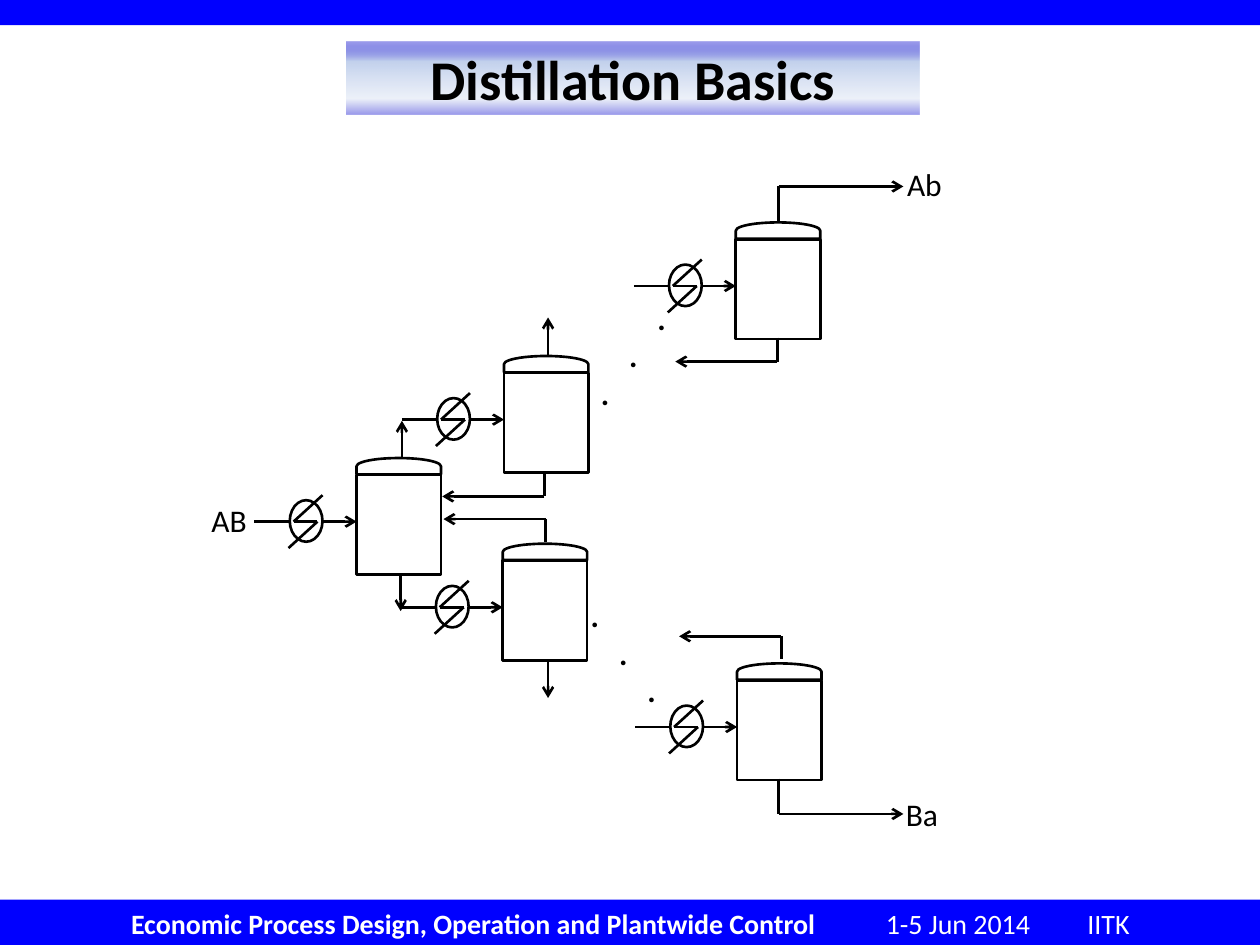
from lxml import etree
from pptx import Presentation, util as u
from pptx.dml.color import RGBColor
from pptx.enum import shapes, text
from pptx.oxml import parse_xml
from pptx.oxml.ns import nsdecls, qn

WIDTH, HEIGHT = 10, 7.5
INK, BLUE, WHITE = "000000", "0000FF", "FFFFFF"
TANK_W, TANK_H, CAP_H = 0.67, 0.79, 0.13
DOT_INDENT = 0.225
BOX = shapes.MSO_SHAPE.RECTANGLE


def rgb(value):
    return RGBColor.from_string(value)


def add_shape(slide, kind, left, top, width, height, fill=None, line=None):
    shape = slide.shapes.add_shape(kind, *map(u.Inches, (left, top, width, height)))
    shape.shadow.inherit = False
    if fill:
        shape.fill.solid()
        shape.fill.fore_color.rgb = rgb(fill)
    else:
        shape.fill.background()
    if line:
        shape.line.color.rgb = rgb(line)
        shape.line.width = u.Pt(1.5)
    else:
        shape.line.fill.background()
    return shape


def write(shape, paragraphs, size=18, color=INK, align=text.PP_ALIGN.LEFT,
          anchor=text.MSO_ANCHOR.TOP, wrap=False, indents=()):
    """Fill a shape with paragraphs, each a list of (words, bold) runs."""
    frame = shape.text_frame
    frame.word_wrap = wrap
    frame.vertical_anchor = anchor
    for i, runs in enumerate(paragraphs):
        paragraph = frame.add_paragraph() if i else frame.paragraphs[0]
        paragraph.alignment = align
        if indents:
            paragraph._p.get_or_add_pPr().set("marL", str(u.Inches(indents[i])))
        for words, bold in runs:
            run = paragraph.add_run()
            run.text = words
            run.font.name, run.font.size, run.font.bold = "Calibri", u.Pt(size), bold
            run.font.color.rgb = rgb(color)
    return frame


def pipe(slide, *points, arrow=True):
    """Join points with straight lines; the arrow sits at the last one."""
    for start, end in zip(points, points[1:]):
        line = slide.shapes.add_connector(
            shapes.MSO_CONNECTOR.STRAIGHT, *map(u.Inches, (*start, *end)))
        line.line.color.rgb = rgb(INK)
        line.line.width = u.Pt(1.5)
        if arrow and end == points[-1]:
            etree.SubElement(line.line._get_or_add_ln(), qn("a:tailEnd"), type="arrow")
        etree.SubElement(line._element.spPr, qn("a:effectLst"))


def bars(slide):
    add_shape(slide, BOX, 0, 0, WIDTH, 0.2, fill=BLUE)
    footer = add_shape(slide, BOX, 0, 7.14, WIDTH, 0.37, fill=BLUE)
    course = "Economic Process Design, Operation and Plantwide Control"
    frame = write(footer, [[(course, True), ("\t1-5 Jun 2014\tIITK", False)]], size=16,
                  color=WHITE, anchor=text.MSO_ANCHOR.MIDDLE, wrap=True)
    frame.margin_left, frame.margin_right = u.Inches(1.04), 0
    tabs = etree.SubElement(frame.paragraphs[0]._p.get_or_add_pPr(), qn("a:tabLst"))
    for stop in (5.99, 7.59):
        etree.SubElement(tabs, qn("a:tab"), pos=str(u.Inches(stop)), algn="l")


def title(slide, left, top, width, height):
    banner = add_shape(slide, BOX, left, top, width, height)
    stops = [(1, "0000CC", 39), (27, "C2D1ED", 100), (78, "D2DDF1", 40), (100, "0000CC", 40)]
    stop_xml = "".join(
        f'<a:gs pos="{pos * 1000}"><a:srgbClr val="{color}">'
        f'<a:alpha val="{alpha * 1000}"/></a:srgbClr></a:gs>' for pos, color, alpha in stops)
    gradient = parse_xml(f'<a:gradFill {nsdecls("a")} rotWithShape="1"><a:gsLst>{stop_xml}'
                         '</a:gsLst><a:lin ang="5400000" scaled="0"/></a:gradFill>')
    properties = banner._element.spPr
    properties.replace(properties.find(qn("a:noFill")), gradient)
    write(banner, [[("Distillation Basics", True)]], size=32, wrap=True,
          align=text.PP_ALIGN.CENTER, anchor=text.MSO_ANCHOR.MIDDLE)


def column(slide, left, feed):
    """Tank with its left edge at left, fed through a heater at height feed."""
    add_shape(slide, BOX, left, feed - 0.37, TANK_W, TANK_H, line=INK)
    cap = add_shape(slide, shapes.MSO_SHAPE.FLOWCHART_DELAY, left + (TANK_W - CAP_H) / 2,
                    feed - 0.44 - TANK_W / 2, CAP_H, TANK_W, line=INK)
    cap.rotation = 270
    add_shape(slide, shapes.MSO_SHAPE.OVAL, left - 0.53, feed - 0.17, 0.26, 0.33, line=INK)
    slash = [(-0.27, -0.21), (-0.5, 0), (-0.31, 0), (-0.54, 0.21)]
    pipe(slide, *((left + x, feed + y) for x, y in slash), arrow=False)
    pipe(slide, (left - 0.81, feed), (left - 0.54, feed), arrow=False)
    pipe(slide, (left - 0.27, feed), (left, feed))


def recycle(slide, x, tank_end, turn):
    """Stream that leaves a tank, turns and runs back to the left."""
    pipe(slide, (x, tank_end), (x, turn), (x - 0.81, turn))


def label(slide, words, left, top):
    box = slide.shapes.add_textbox(*map(u.Inches, (left, top, 0.48, 0.4)))
    write(box, [[(words, False)]])


def dots(slide, left, top, levels):
    box = slide.shapes.add_textbox(*map(u.Inches, (left, top, 0.8, 1.01)))
    write(box, [[(".", True)]] * len(levels), wrap=True,
          indents=[level * DOT_INDENT for level in levels])


def cascade(slide):
    for left, feed in [(2.83, 4.14), (4, 3.33), (3.99, 4.82), (5.84, 2.27), (5.85, 5.77)]:
        column(slide, left, feed)

    for x, start, end in [(3.19, 3.64, 3.34), (3.18, 4.55, 4.85),
                          (4.35, 2.82, 2.52), (4.35, 5.24, 5.54)]:
        pipe(slide, (x, start), (x, end))
    for x, tank_end, turn in [(4.32, 3.75, 3.94), (4.33, 4.3, 4.12),
                              (6.17, 2.68, 2.87), (6.2, 5.23, 5.05)]:
        recycle(slide, x, tank_end, turn)
    for tank_end, turn in [(1.76, 1.48), (6.18, 6.46)]:
        pipe(slide, (6.18, tank_end), (6.18, turn), (7.17, turn))

    for words, left, top in [("AB", 1.58, 3.93), ("Ab", 7.1, 1.26), ("Ba", 7.09, 6.26)]:
        label(slide, words, left, top)
    dots(slide, 4.67, 2.32, (2, 1, 0))
    dots(slide, 4.59, 4.68, (0, 1, 2))


def main():
    deck = Presentation()
    deck.slide_width, deck.slide_height = u.Inches(WIDTH), u.Inches(HEIGHT)
    slide = deck.slides.add_slide(deck.slide_layouts[6])
    bars(slide)
    title(slide, 2.75, 0.33, 4.55, 0.58)
    cascade(slide)
    deck.save("out.pptx")


if __name__ == "__main__":
    main()
